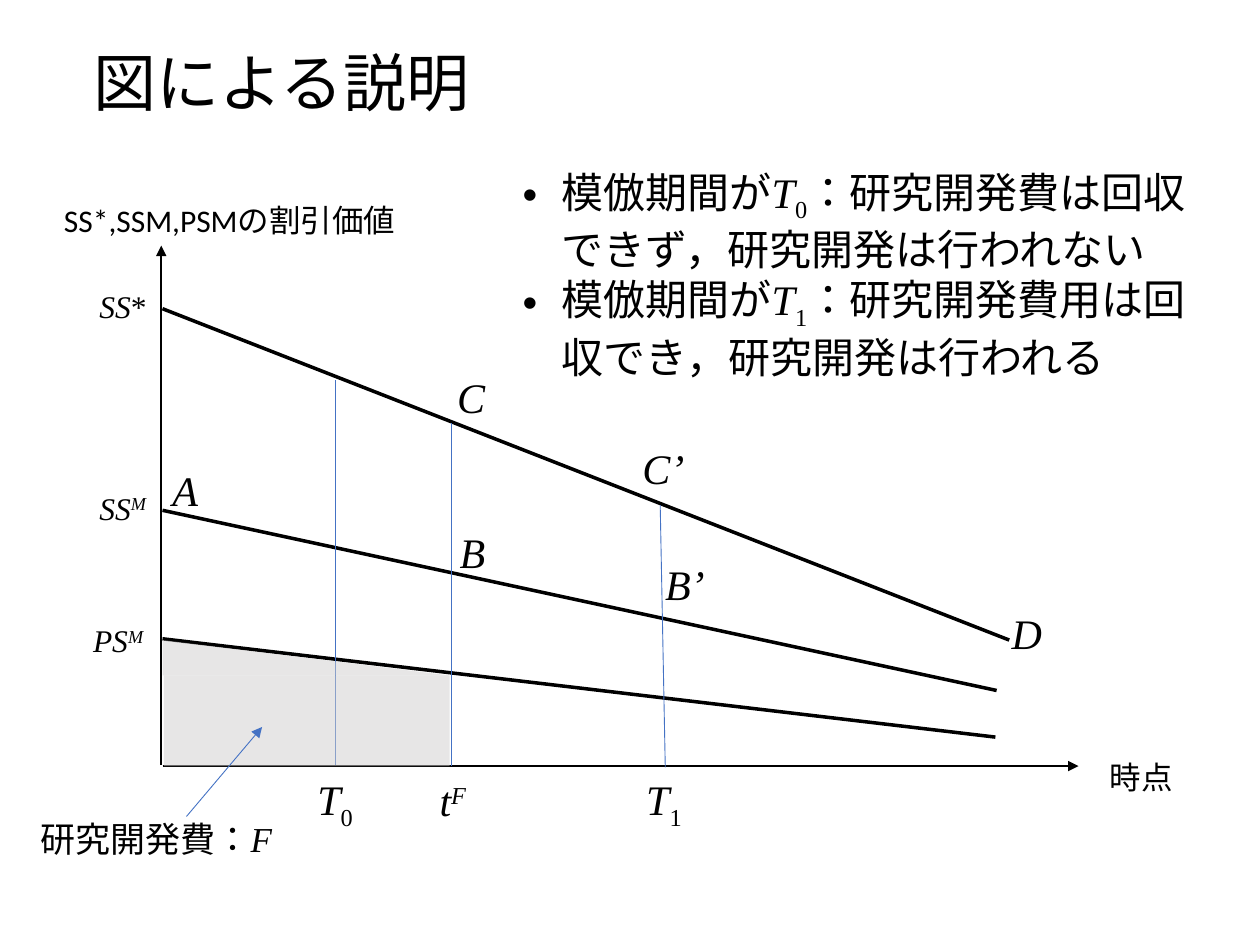
from typing import NamedTuple

from lxml.etree import SubElement
from pptx import Presentation
from pptx.dml.color import RGBColor
from pptx.enum.lang import MSO_LANGUAGE_ID
from pptx.enum.shapes import MSO_CONNECTOR, MSO_SHAPE
from pptx.enum.text import MSO_ANCHOR, MSO_AUTO_SIZE, PP_ALIGN
from pptx.oxml.ns import qn
from pptx.util import Inches, Pt

BLACK, BLUE, GREY = "000000", "4472C4", "D0CECE"
SANS, SERIF = "Calibri", "Times New Roman"
SUPERSCRIPT, SUBSCRIPT = 30, -25


class Run(NamedTuple):
    text: str
    font: str = SANS
    italic: bool = False
    baseline: int = 0


class Line(NamedTuple):
    start: tuple[float, float]
    end: tuple[float, float]
    color: str = BLACK
    width: float = 2
    arrow: bool = False


class Label(NamedTuple):
    box: tuple[float, float, float, float]
    size: float
    paragraphs: list[list[Run]]
    wrap: bool = True
    bullets: bool = False


def variable(text: str, baseline: int = 0) -> Run:
    return Run(text, SERIF, True, baseline)


def index(text: str) -> Run:
    return Run(text, SERIF, False, SUBSCRIPT)


def point(name: str, left: float, top: float, width: float) -> Label:
    return Label((left, top, width, 0.5), 24, [[variable(name)]], wrap=False)


def rgb(color: str) -> RGBColor:
    return RGBColor.from_string(color)


def add_run(paragraph, part: Run, size: float) -> None:
    run = paragraph.add_run()
    run.text = part.text
    font = run.font
    font.name, font.size, font.italic = part.font, Pt(size), part.italic
    font.color.rgb = rgb(BLACK)
    font.language_id = MSO_LANGUAGE_ID.JAPANESE
    if part.baseline:
        run._r.get_or_add_rPr().set("baseline", str(part.baseline * 1000))


def add_bullet(paragraph) -> None:
    properties = paragraph._p.get_or_add_pPr()
    properties.set("marL", str(Inches(0.31)))
    properties.set("indent", str(Inches(-0.31)))
    SubElement(properties, qn("a:buFont"), typeface="Arial")
    SubElement(properties, qn("a:buChar"), char="•")


def add_label(slide, label: Label) -> None:
    frame = slide.shapes.add_textbox(*map(Inches, label.box)).text_frame
    frame.word_wrap = label.wrap
    frame.auto_size = MSO_AUTO_SIZE.SHAPE_TO_FIT_TEXT
    for number, runs in enumerate(label.paragraphs):
        paragraph = frame.add_paragraph() if number else frame.paragraphs[0]
        if label.bullets:
            add_bullet(paragraph)
        for run in runs:
            add_run(paragraph, run, label.size)


def add_line(slide, line: Line) -> None:
    connector = slide.shapes.add_connector(
        MSO_CONNECTOR.STRAIGHT, *map(Inches, line.start + line.end))
    connector.line.color.rgb = rgb(line.color)
    connector.line.width = Pt(line.width)
    if line.arrow:
        SubElement(connector.line._get_or_add_ln(), qn("a:tailEnd"), type="triangle")
    SubElement(connector._element.spPr, qn("a:effectLst"))


def add_shading(slide, kind: MSO_SHAPE, box: tuple[float, float, float, float]) -> None:
    shape = slide.shapes.add_shape(kind, *map(Inches, box))
    shape.shadow.inherit = False
    shape.fill.solid()
    shape.fill.fore_color.rgb = rgb(GREY)
    color = shape._element.spPr.find(qn("a:solidFill"))[0]
    SubElement(color, qn("a:alpha"), val="50000")
    shape.line.fill.background()


def add_title(slide, text: str) -> None:
    title = slide.shapes.title
    title.left, title.top, title.width, title.height = map(Inches, (0.64, 0.08, 8.53, 1.21))
    title.text_frame.vertical_anchor = MSO_ANCHOR.MIDDLE
    paragraph = title.text_frame.paragraphs[0]
    paragraph.alignment = PP_ALIGN.LEFT
    paragraph.line_spacing = 0.9
    add_run(paragraph, Run(text), 36)


GRAPH_LINES = [
    Line((1.29, 6.08), (8.56, 6.08), width=1, arrow=True),
    Line((1.28, 6.07), (1.28, 1.95), width=1, arrow=True),
    Line((1.29, 2.45), (8.01, 5.08)),
    Line((1.29, 4.05), (7.91, 5.48)),
    Line((1.29, 5.07), (7.9, 5.85)),
    Line((2.66, 6.07), (2.66, 3.02), BLUE, 0.5),
    Line((3.58, 6.08), (3.58, 3.36), BLUE, 0.5),
]
OVERLAY_LINES = [
    Line((5.28, 6.09), (5.24, 4.01), BLUE, 0.5),
    Line((1.48, 6.48), (2.08, 5.77), BLUE, 0.5, arrow=True),
]
SHADING = [
    (MSO_SHAPE.RECTANGLE, (1.3, 5.36, 2.27, 0.72)),
    (MSO_SHAPE.RIGHT_TRIANGLE, (1.29, 5.08, 2.27, 0.28)),
]
LABELS = [
    Label((8.71, 5.97, 0.91, 0.4), 18, [[Run("時点")]]),
    Label((0.41, 1.55, 2.93, 0.4), 18, [[Run("SS*,SSM,PSMの割引価値")]]),
    Label((0.69, 2.23, 0.59, 0.4), 18, [[variable("SS"), Run("*", SERIF)]]),
    Label((0.69, 3.83, 0.63, 0.4), 18, [[variable("SS"), variable("M", SUPERSCRIPT)]]),
    Label((0.64, 4.88, 0.68, 0.4), 18, [[variable("PS"), variable("M", SUPERSCRIPT)]]),
    Label((3.39, 6.1, 0.58, 0.5), 24, [[variable("t"), variable("F", SUPERSCRIPT)]]),
    Label((2.42, 6.09, 0.63, 0.5), 24, [[variable("T"), index("0")]]),
    Label((5.03, 6.09, 0.51, 0.5), 24, [[variable("T"), index("1")]]),
    point("A", 1.27, 3.64, 0.41),
    point("D", 7.93, 4.77, 0.45),
    point("C", 3.53, 2.9, 0.43),
    point("B", 3.55, 4.13, 0.41),
    point("B’", 5.18, 4.38, 0.52),
    point("C’", 5, 3.46, 0.54),
    Label((4.05, 1.27, 5.6, 2.02), 24, [
        [Run("模倣期間が"), variable("T"), index(number), Run(outcome)]
        for number, outcome in (
            ("0", "：研究開発費は回収できず，研究開発は行われない"),
            ("1", "：研究開発費用は回収でき，研究開発は行われる"),
        )
    ], bullets=True),
    Label((0.22, 6.44, 2.13, 0.44), 20, [[Run("研究開発費："), variable("F")]]),
]


def main() -> None:
    presentation = Presentation()
    presentation.slide_width, presentation.slide_height = Inches(10), Inches(7.5)
    slide = presentation.slides.add_slide(presentation.slide_layouts.get_by_name("Title Only"))
    add_title(slide, "図による説明")
    for line in GRAPH_LINES:
        add_line(slide, line)
    for kind, box in SHADING:
        add_shading(slide, kind, box)
    for line in OVERLAY_LINES:
        add_line(slide, line)
    for label in LABELS:
        add_label(slide, label)
    presentation.save("out.pptx")


if __name__ == "__main__":
    main()
